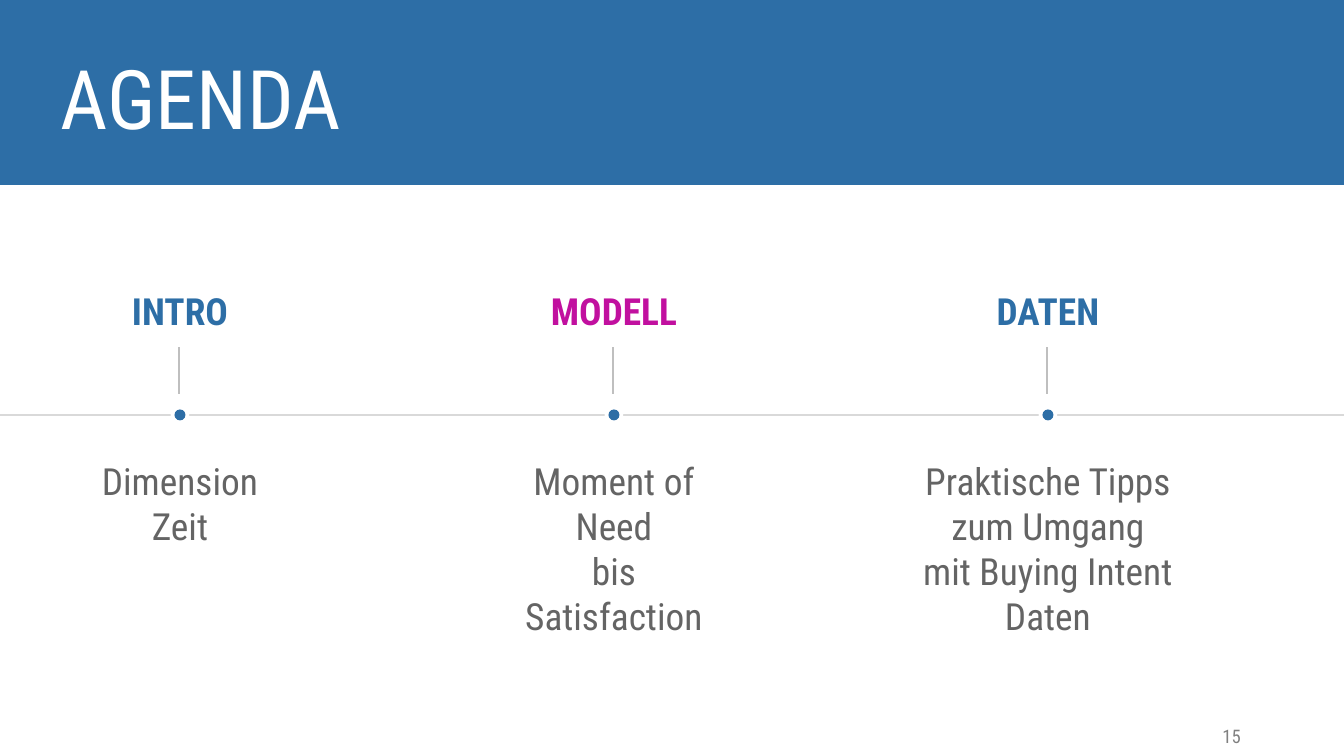
from lxml import etree
from pptx import Presentation
from pptx import util as u
from pptx.dml.color import RGBColor
from pptx.enum import shapes, text
from pptx.oxml import ns

PX = 914400 / 134.4
FONT = "Roboto Condensed"
COLORS = {
    "blue": "2D6EA6",
    "magenta": "C1109F",
    "body": "646464",
    "number": "808080",
    "axis": "D9D9D9",
    "stem": "BFBFBF",
    "white": "FFFFFF",
}


def px(*lengths):
    return [u.Emu(round(length * PX)) for length in lengths]


class SlideStyle:
    def __init__(self, page):
        self.page = page

    def color(self, name):
        return RGBColor.from_string(COLORS[name])

    def fill_text(self, box, words, size, color, align, bold=False):
        frame = box.text_frame
        frame.word_wrap = True
        frame.text = words
        for para in frame.paragraphs:
            para.alignment = align
            for span in para.runs:
                span.font.name = FONT
                span.font.size = u.Pt(size)
                span.font.bold = bold
                span.font.color.rgb = self.color(color)

    def title(self, words, *place):
        box = self.page.shapes.title
        box.left, box.top, box.width, box.height = px(*place)
        box.text_frame.vertical_anchor = text.MSO_ANCHOR.MIDDLE
        box.text_frame.auto_size = text.MSO_AUTO_SIZE.NONE
        self.fill_text(box, words, 44, "white", text.PP_ALIGN.LEFT)

    def label(self, words, *place, size=20, color="body",
              align=text.PP_ALIGN.CENTER, bold=False):
        box = self.page.shapes.add_textbox(*px(*place))
        self.fill_text(box, words, size, color, align, bold)

    def shape(self, kind, color, *place):
        shape = self.page.shapes.add_shape(kind, *px(*place))
        shape.shadow.inherit = False
        shape.fill.solid()
        shape.fill.fore_color.rgb = self.color(color)
        shape.line.fill.background()
        return shape

    def band(self, *place):
        band = self.shape(shapes.MSO_SHAPE.RECTANGLE, "blue", *place)
        # Keep the band behind the title
        self.page.shapes._spTree.insert(2, band._element)

    def dot(self, center, middle, size=11):
        dot = self.shape(shapes.MSO_SHAPE.OVAL, "blue",
                         center - size / 2, middle - size / 2, size, size)
        # White halo that interrupts the axis
        effects = dot._element.spPr.find(ns.qn("a:effectLst"))
        halo = etree.SubElement(effects, ns.qn("a:outerShdw"), sx="170000",
                                sy="170000", algn="ctr", rotWithShape="0")
        etree.SubElement(halo, ns.qn("a:srgbClr"), val=COLORS["white"])

    def line(self, color, *ends):
        line = self.page.shapes.add_connector(
            shapes.MSO_CONNECTOR.STRAIGHT, *px(*ends))
        line.line.color.rgb = self.color(color)
        line.line.width = u.Pt(0.75)
        etree.SubElement(line._element.spPr, ns.qn("a:effectLst"))


def main():
    deck = Presentation()
    deck.slide_width, deck.slide_height = px(1344, 756)
    page = deck.slides.add_slide(deck.slide_layouts[5])
    style = SlideStyle(page)

    # Header
    style.band(0, -3, 1344, 188)
    style.title("AGENDA", 47, 39, 1265, 116)

    # Timeline axis
    axis = 415
    style.line("axis", 0, axis, 1344, axis)

    # Agenda steps: heading, heading color, text, text width and height
    steps = [
        ("INTRO", "blue", "Dimension Zeit", 223, 104),
        ("MODELL", "magenta", "Moment of Need\vbis\nSatisfaction", 264, 194),
        ("DATEN", "blue", "Praktische Tipps zum Umgang mit Buying Intent Daten",
         276, 194),
    ]
    for index, (heading, color, words, width, height) in enumerate(steps):
        center = 180 + 434 * index
        style.label(heading, center - 133, 282, 266, 59, color=color, bold=True)
        style.line("stem", center - 1, 394, center - 1, 347)
        style.dot(center, axis)
        style.label(words, center - width / 2, 452, width, height)

    # Page number
    style.label("15", 1159, 718, 95, 36, size=10, color="number",
                align=text.PP_ALIGN.RIGHT)

    deck.save("out.pptx")


if __name__ == "__main__":
    main()
